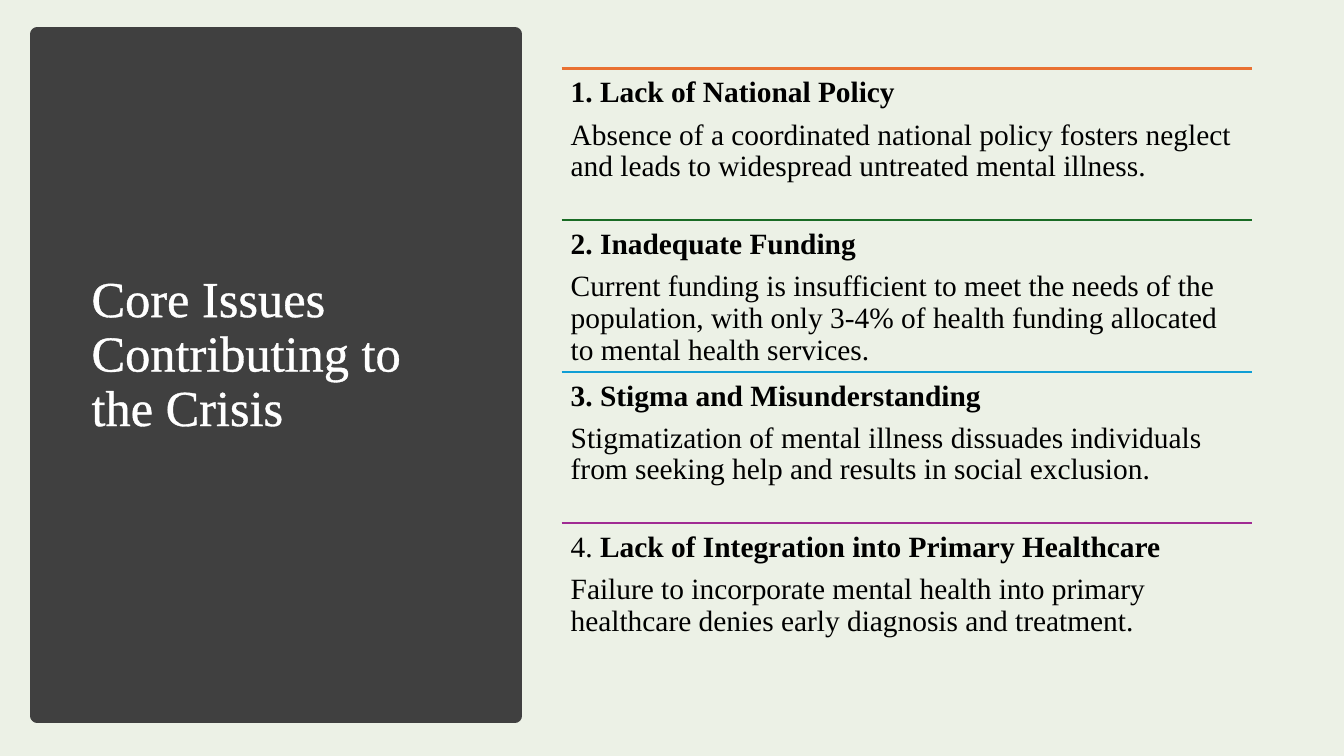
import pptx
import pptx.dml.color
import pptx.enum.shapes
import pptx.enum.text
import pptx.oxml
import pptx.oxml.ns
import pptx.util
from lxml import etree

Inches = pptx.util.Inches
Pt = pptx.util.Pt
qn = pptx.oxml.ns.qn


def color(hex_value):
    return pptx.dml.color.RGBColor.from_string(hex_value)


def apply(target, formats):
    for name, value in formats.items():
        setattr(target, name, value)


class IssueSlide:
    font = "Times New Roman"
    background = "ECF1E6"
    panel_color = "404040"
    title_color = "FFFFFF"
    body_color = "000000"

    def __init__(self, deck):
        self.slide = deck.slides.add_slide(deck.slide_layouts[6])
        fill = self.slide.background.fill
        fill.solid()
        fill.fore_color.rgb = color(self.background)

    def panel(self, left, top, width, height):
        panel = self.slide.shapes.add_shape(
            pptx.enum.shapes.MSO_SHAPE.RECTANGLE,
            Inches(left), Inches(top), Inches(width), Inches(height))
        panel.shadow.inherit = False
        panel.fill.solid()
        panel.fill.fore_color.rgb = color(self.panel_color)
        panel.line.color.rgb = color(self.panel_color)
        panel.line.width = Pt(10)

    def rule(self, left, top, width, hex_value):
        rule = self.slide.shapes.add_connector(
            pptx.enum.shapes.MSO_CONNECTOR.STRAIGHT,
            Inches(left), Inches(top), Inches(left + width), Inches(top))
        rule.line.color.rgb = color(hex_value)
        rule.line.width = Pt(1.5)
        etree.SubElement(rule._element.spPr, qn("a:effectLst"))

    def frame(self, left, top, width, height, formats):
        frame = self.slide.shapes.add_textbox(
            Inches(left), Inches(top), Inches(width), Inches(height)).text_frame
        apply(frame, {"word_wrap": True, **formats})
        return frame

    def run(self, paragraph, text, size, hex_value, bold=False):
        run = paragraph.add_run()
        run.text = text
        apply(run.font, {"name": self.font, "size": Pt(size), "bold": bold})
        run.font.color.rgb = color(hex_value)
        return run

    def title(self, text, left, top, width, height):
        frame = self.frame(left, top, width, height, {
            "vertical_anchor": pptx.enum.text.MSO_ANCHOR.MIDDLE})
        heading = frame.paragraphs[0]
        heading.line_spacing = 0.9
        run = self.run(heading, text, 36, self.title_color)
        # White outline around the letters
        outline = pptx.oxml.parse_xml(
            f'<a:ln {pptx.oxml.ns.nsdecls("a")} w="{Pt(1.75)}"><a:solidFill>'
            f'<a:srgbClr val="{self.title_color}"/></a:solidFill></a:ln>')
        run.font._element.insert(0, outline)

    def issue(self, heading, detail, left, top, width, height):
        margins = {f"margin_{side}": Inches(0.09)
                   for side in ("left", "top", "right", "bottom")}
        frame = self.frame(left, top, width, height, margins)
        for paragraph, runs in ((frame.paragraphs[0], heading),
                                (frame.add_paragraph(), [(detail, False)])):
            apply(paragraph, {"line_spacing": 0.9, "space_after": Pt(7.35)})
            for text, bold in runs:
                self.run(paragraph, text, 21, self.body_color, bold)


ISSUES = [
    ("E97132", [("1. Lack of National Policy", True)],
     "Absence of a coordinated national policy fosters neglect and leads to "
     "widespread untreated mental illness."),
    ("196B24", [("2. Inadequate Funding", True)],
     "Current funding is insufficient to meet the needs of the population, with "
     "only 3-4% of health funding allocated to mental health services."),
    ("0F9ED5", [("3. Stigma and Misunderstanding", True)],
     "Stigmatization of mental illness dissuades individuals from seeking help "
     "and results in social exclusion."),
    ("A02B93", [("4. ", False), ("Lack of Integration into Primary Healthcare", True)],
     "Failure to incorporate mental health into primary healthcare denies early "
     "diagnosis and treatment."),
]


def main():
    deck = pptx.Presentation()
    deck.slide_width, deck.slide_height = Inches(13.33), Inches(7.5)
    page = IssueSlide(deck)

    # Title panel
    page.panel(0.37, 0.34, 4.74, 6.76)
    page.title("Core Issues Contributing to the Crisis", 0.81, 0.81, 3.8, 5.43)

    # Issues, one row each under a coloured rule
    left, first_top, width, row_height = 5.57, 0.68, 6.85, 1.504
    for row, (hex_value, heading, detail) in enumerate(ISSUES):
        top = first_top + row * row_height
        page.rule(left, top, width, hex_value)
        page.issue(heading, detail, left, top, width, row_height)

    deck.save("out.pptx")


if __name__ == "__main__":
    main()
